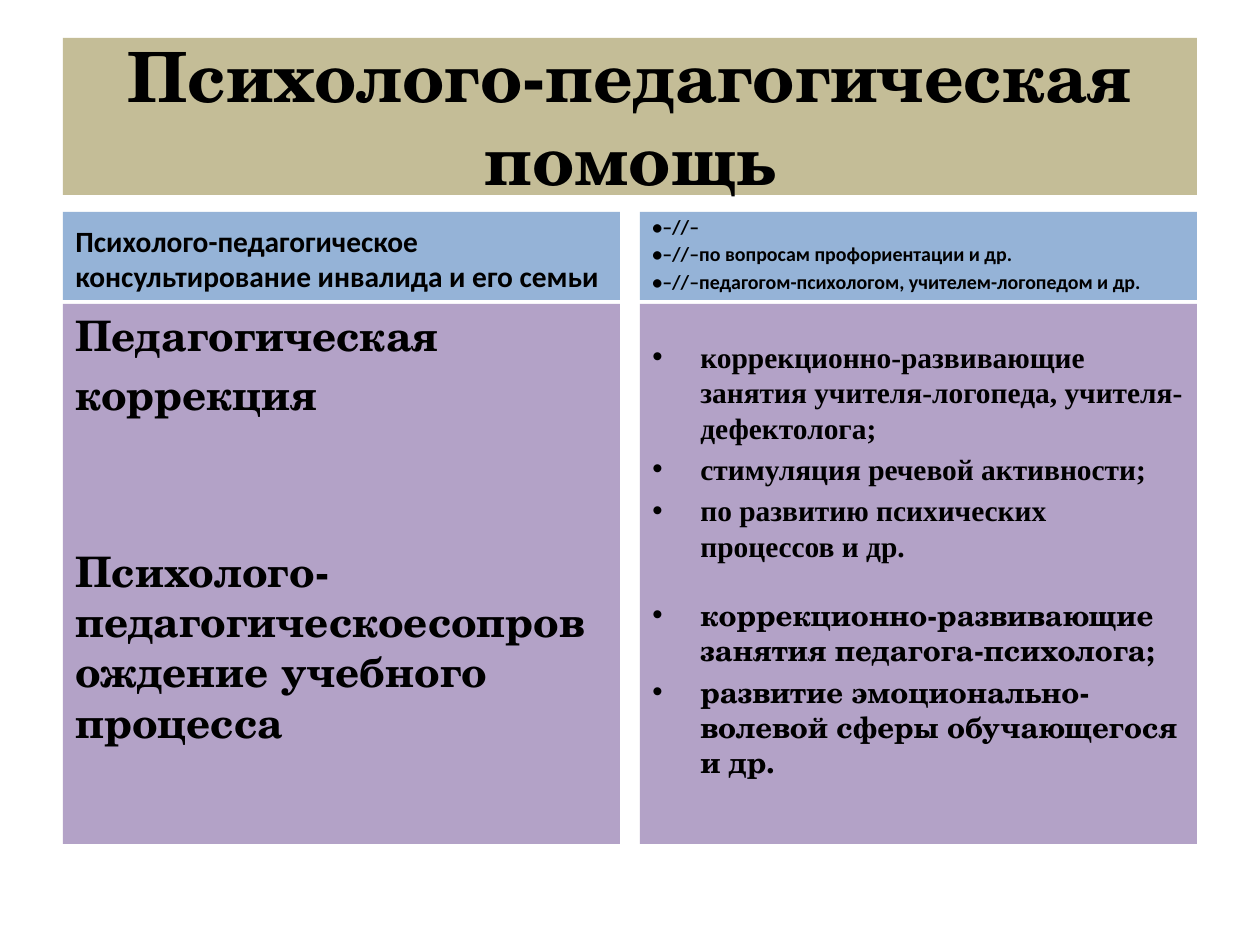
from pptx import Presentation
from pptx.dml.color import RGBColor
from pptx.enum.shapes import MSO_SHAPE
from pptx.enum.text import MSO_ANCHOR, PP_ALIGN
from pptx.oxml.xmlchemy import OxmlElement
from pptx.util import Emu, Pt

SCHOLA = "TeX Gyre Schola"
TIMES = "Times New Roman"
CALIBRI = "Calibri"
LEFT, RIGHT = 63, 640
COLUMN_WIDTH = 557
HEADER_TOP, HEADER_HEIGHT = 212, 88
BODY_TOP, BODY_HEIGHT = 304, 540


def px(value):
    return Emu(round(value * 914400 / 126))


def color(value):
    return RGBColor.from_string(value)


def add_panel(slide, left, top, width, height, fill, anchor, inset_top=6):
    shape = slide.shapes.add_shape(
        MSO_SHAPE.RECTANGLE, px(left), px(top), px(width), px(height))
    shape.shadow.inherit = False
    shape.fill.solid()
    shape.fill.fore_color.rgb = color(fill)
    shape.line.fill.background()
    frame = shape.text_frame
    frame.word_wrap = True
    frame.vertical_anchor = anchor
    frame.margin_top = px(inset_top)
    return frame


def add_text(frame, text, font, size, before=0, align=PP_ALIGN.LEFT):
    paragraph = frame.paragraphs[0]
    if paragraph.runs:
        paragraph = frame.add_paragraph()
    paragraph.add_run().text = text
    paragraph.alignment = align
    paragraph.space_before = Pt(before)
    paragraph.font.name = font
    paragraph.font.size = Pt(size)
    paragraph.font.bold = True
    paragraph.font.color.rgb = color("000000")
    return paragraph


def add_bullet(frame, text, font, before):
    paragraph = add_text(frame, text, font, 16.8, before)
    paragraph.line_spacing = Pt(20.2)
    properties = paragraph._p.get_or_add_pPr()
    properties.set("marL", str(px(48)))
    properties.set("indent", str(-px(48)))
    bullet_font = OxmlElement("a:buFont")
    bullet_font.set("typeface", "Arial")
    bullet = OxmlElement("a:buChar")
    bullet.set("char", "•")
    properties.insert_element_before(bullet_font, "a:tabLst", "a:defRPr", "a:extLst")
    properties.insert_element_before(bullet, "a:tabLst", "a:defRPr", "a:extLst")


def add_title(slide):
    frame = add_panel(slide, LEFT, 38, 1134, 157, "C4BD97", MSO_ANCHOR.MIDDLE)
    add_text(frame, "Психолого-педагогическая помощь", SCHOLA, 39.6,
             align=PP_ALIGN.CENTER)


def add_header(slide, left, lines, size):
    frame = add_panel(slide, left, HEADER_TOP, COLUMN_WIDTH, HEADER_HEIGHT,
                      "95B3D7", MSO_ANCHOR.BOTTOM)
    for line in lines:
        add_text(frame, line, CALIBRI, size, size * 0.2)


def add_body(slide, left, inset_top=6):
    return add_panel(slide, left, BODY_TOP, COLUMN_WIDTH, BODY_HEIGHT,
                     "B3A2C7", MSO_ANCHOR.TOP, inset_top)


def main():
    presentation = Presentation()
    presentation.slide_width = px(1260)
    presentation.slide_height = px(945)
    slide = presentation.slides.add_slide(presentation.slide_layouts[6])

    add_title(slide)
    add_header(slide, LEFT, [
        "Психолого-педагогическое консультирование инвалида и его семьи"], 16.8)
    topics = add_body(slide, LEFT)
    for text, before in [
        ("Педагогическая", 0),
        ("коррекция", 4.8),
        ("Психолого-педагогическоесопровождение учебного процесса", 72),
    ]:
        add_text(topics, text, SCHOLA, 24, before)

    add_header(slide, RIGHT, [
        "•–//–",
        "•–//–по вопросам профориентации и др.",
        "•–//–педагогом-психологом, учителем-логопедом и др."], 11.4)
    activities = add_body(slide, RIGHT, 35)
    for text, font, before in [
        ("коррекционно-развивающие занятия учителя-логопеда, "
         "учителя-дефектолога;", TIMES, 0),
        ("стимуляция речевой активности;", TIMES, 3.4),
        ("по развитию психических процессов и др.", TIMES, 3.4),
        ("коррекционно-развивающие занятия педагога-психолога;", SCHOLA, 19.4),
        ("развитие эмоционально-волевой сферы обучающегося и др.", SCHOLA, 3.4),
    ]:
        add_bullet(activities, text, font, before)

    presentation.save("out.pptx")


if __name__ == "__main__":
    main()
